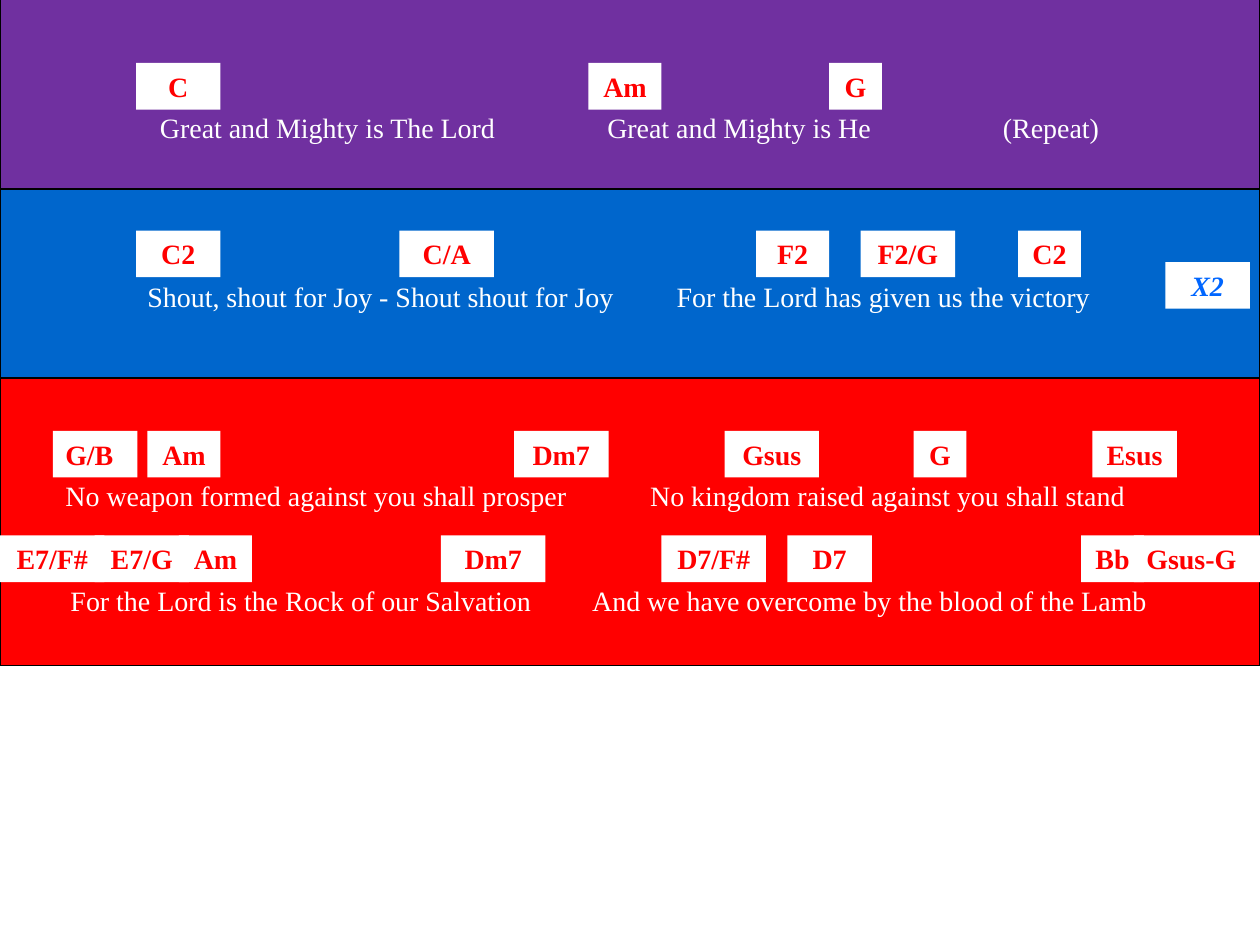
"""Build a song sheet slide with chord chips above the lyrics."""
from dataclasses import dataclass

from lxml import etree
from pptx import Presentation
from pptx import util as u
from pptx.dml.color import RGBColor
from pptx.enum import shapes, text
from pptx.oxml.ns import qn


@dataclass(frozen=True)
class Theme:
    font: str = "Times New Roman"
    size: int = 16
    line_height: float = 0.37
    inset: float = 0.1
    white: str = "FFFFFF"
    black: str = "000000"
    verse: str = "7030A0"
    chorus: str = "0066CC"
    bridge: str = "FF0000"
    chord: str = "FF0000"
    repeat: str = "0066FF"


THEME = Theme()
LEFT, CENTER = text.PP_ALIGN.LEFT, text.PP_ALIGN.CENTER

BANDS = [
    (-0.03, 1.67, THEME.verse),
    (2.95, 2.33, THEME.bridge),
    (1.5, 1.5, THEME.chorus),
]

LYRICS = [
    (0, 0.83, [(1.27, "Great and Mighty is The Lord"),
               (4.82, "Great and Mighty is He"), (7.96, "(Repeat)")]),
    (-0.08, 2.17, [(1.17, "Shout, shout for Joy - Shout shout for Joy"),
                   (5.37, "For the Lord has given us the victory")]),
    (-0.08, 3.75, [(0.52, "No weapon formed against you shall prosper"),
                   (5.16, "No kingdom raised against you shall stand")]),
    (0, 4.58, [(0.56, "For the Lord is the Rock of our Salvation"),
               (4.7, "And we have overcome by the blood of the Lamb")]),
]

CHORD_ROWS = {
    0.5: [("C", 1.08, 0.67), ("Am", 4.67, 0.58), ("G", 6.58, 0.42)],
    1.83: [("C2", 1.08, 0.67), ("C/A", 3.17, 0.75), ("F2", 6, 0.58),
           ("F2/G", 6.83, 0.75), ("C2", 8.08, 0.5)],
    3.42: [("G/B", 0.42, 0.67), ("Am", 1.17, 0.58), ("Dm7", 4.08, 0.75),
           ("Gsus", 5.75, 0.75), ("G", 7.25, 0.42), ("Esus", 8.67, 0.67)],
    4.25: [("Dm7", 3.5, 0.83), ("Gsus-G", 9, 1), ("E7/G", 0.75, 0.75),
           ("D7/F#", 5.25, 0.83), ("D7", 6.25, 0.67), ("Bb", 8.58, 0.5),
           ("E7/F#", 0, 0.83), ("Am", 1.42, 0.58)],
}
LEFT_ALIGNED = {"G/B", "Gsus-G"}


def add_block(slide, left, top, width, height, color):
    """Add a filled rectangle without line or shadow."""
    block = slide.shapes.add_shape(
        shapes.MSO_SHAPE.RECTANGLE, u.Inches(left), u.Inches(top),
        u.Inches(width), u.Inches(height))
    block.shadow.inherit = False
    block.fill.solid()
    block.fill.fore_color.rgb = RGBColor.from_string(color)
    block.line.fill.background()
    return block


def add_band(slide, top, height, color):
    """Add an outlined band across the slide."""
    band = add_block(slide, 0, top, 10, height, color)
    band.line.color.rgb = RGBColor.from_string(THEME.black)
    band.line.width = u.Pt(0.75)


def write(box, words, color, align, bold=None, italic=None):
    """Write one styled line into a box and return its paragraph."""
    frame = box.text_frame
    frame.word_wrap = True
    frame.auto_size = text.MSO_AUTO_SIZE.SHAPE_TO_FIT_TEXT
    frame.vertical_anchor = text.MSO_ANCHOR.TOP
    frame.text = words
    para = frame.paragraphs[0]
    para.alignment = align
    for span in para.runs:
        font = span.font
        font.name, font.size = THEME.font, u.Pt(THEME.size)
        font.bold, font.italic = bold, italic
        font.color.rgb = RGBColor.from_string(color)
    return para


def add_tab_stops(para, positions):
    """Set left tab stops, in inches from the text margin."""
    stops = etree.SubElement(para._p.get_or_add_pPr(), qn("a:tabLst"))
    for position in positions:
        etree.SubElement(stops, qn("a:tab"),
                         pos=str(u.Inches(position)), algn="l")


def add_lyric(slide, left, top, phrases):
    """Add a lyric line with each phrase starting at its own place."""
    box = slide.shapes.add_textbox(
        u.Inches(left), u.Inches(top), u.Inches(10),
        u.Inches(THEME.line_height))
    starts, words = zip(*phrases)
    box.text_frame.margin_left = u.Inches(starts[0] - left)
    box.text_frame.margin_right = 0
    para = write(box, "\t".join(words), THEME.white, LEFT)
    add_tab_stops(para, [start - starts[0] for start in starts[1:]])


def add_chip(slide, label, left, top, width, color=THEME.chord, italic=None):
    """Add a white chip with a bold label."""
    chip = add_block(slide, left, top, width, THEME.line_height, THEME.white)
    chip.text_frame.margin_left = u.Inches(THEME.inset)
    chip.text_frame.margin_right = u.Inches(THEME.inset)
    align = LEFT if label in LEFT_ALIGNED else CENTER
    write(chip, label, color, align, bold=True, italic=italic)


def main():
    """Build and save the song sheet."""
    deck = Presentation()
    deck.slide_width, deck.slide_height = u.Inches(10), u.Inches(7.5)
    slide = deck.slides.add_slide(deck.slide_layouts.get_by_name("Blank"))
    for band in BANDS:
        add_band(slide, *band)
    for lyric in LYRICS:
        add_lyric(slide, *lyric)
    for top, chords in CHORD_ROWS.items():
        for label, left, width in chords:
            add_chip(slide, label, left, top, width)
    add_chip(slide, "X2", 9.25, 2.08, 0.67, THEME.repeat, italic=True)
    deck.save("out.pptx")


if __name__ == "__main__":
    main()
